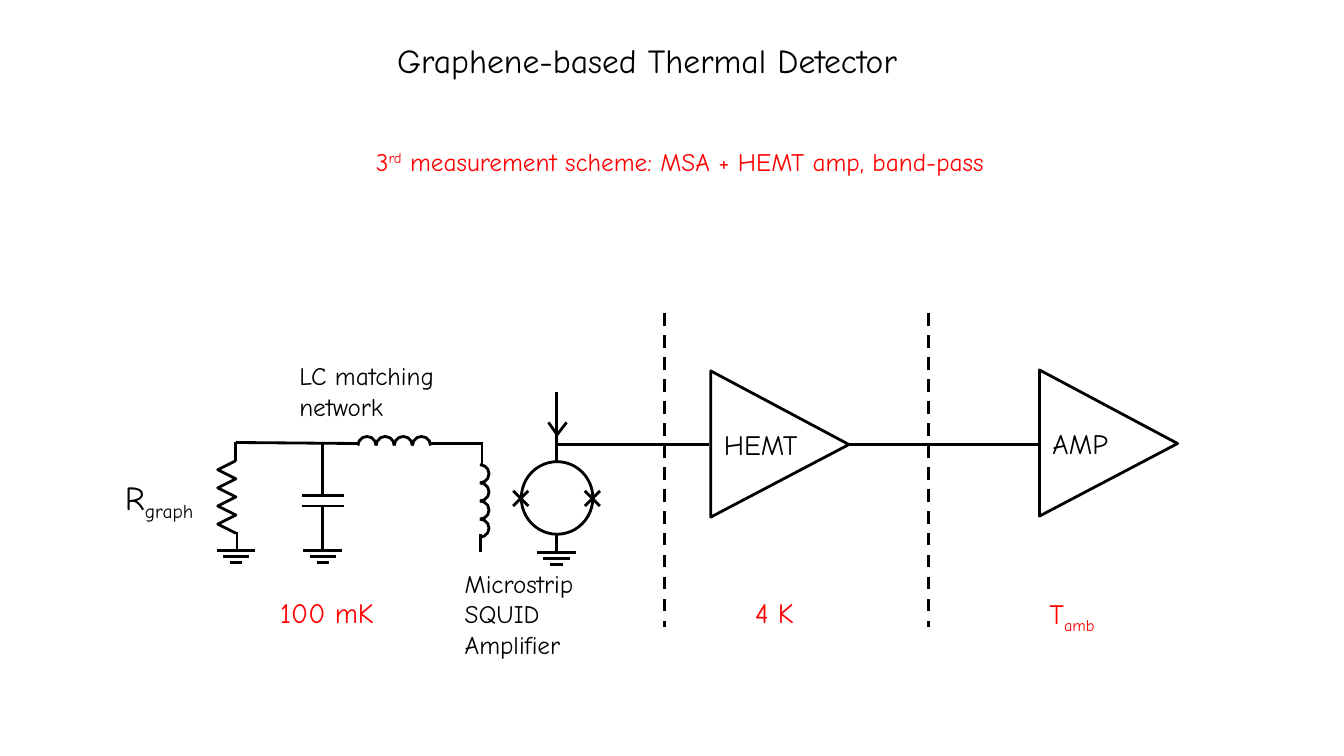
from pptx import Presentation
from pptx.util import Inches, Pt
from pptx.dml.color import RGBColor
from pptx.enum.dml import MSO_LINE as Dash
from pptx.enum.shapes import MSO_CONNECTOR as Link, MSO_SHAPE as Shape
from pptx.oxml.ns import qn
from lxml import etree

BLACK = RGBColor(0, 0, 0)
RED = RGBColor(255, 0, 0)

deck = Presentation()
deck.slide_width = Inches(13.33)
deck.slide_height = Inches(7.5)
slide = deck.slides.add_slide(deck.slide_layouts[6])
shapes = slide.shapes


def wire(x1, y1, x2, y2):
    line = shapes.add_connector(Link.STRAIGHT, Inches(x1), Inches(y1), Inches(x2), Inches(y2))
    line.line.color.rgb = BLACK
    line.line.width = Pt(2)
    etree.SubElement(line._element.spPr, qn("a:effectLst"))
    return line


def label(x, y, w, h, lines, size, color=BLACK):
    frame = shapes.add_textbox(Inches(x), Inches(y), Inches(w), Inches(h)).text_frame
    frame.word_wrap = True
    for i, parts in enumerate(lines):
        para = frame.paragraphs[0] if i == 0 else frame.add_paragraph()
        for text, shift in parts:
            run = para.add_run()
            run.text = text
            run.font.name = "Comic Neue"
            run.font.size = Pt(size)
            run.font.color.rgb = color
            if shift:
                run._r.get_or_add_rPr().set("baseline", str(shift * 1000))


label(3.84, 0.35, 5.62, 0.5, [[("Graphene-based Thermal Detector", 0)]], 24)
scheme = [("3", 0), ("rd", 30), (" measurement scheme: MSA + HEMT amp, band-pass", 0)]
label(3.63, 1.4, 6.9, 0.4, [scheme], 18, RED)
label(1.14, 4.68, 1.01, 0.51, [[("R", 0), ("graph", -25)]], 24)
label(2.87, 3.53, 1.66, 0.71, [[("LC matching network", 0)]], 18)
names = ["Microstrip", "SQUID", "Amplifier"]
label(4.51, 5.59, 1.45, 1.01, [[(name, 0)] for name in names], 18)
label(2.68, 5.86, 1.25, 0.44, [[("100 mK", 0)]], 20, RED)
label(7.39, 5.86, 0.75, 0.44, [[("4 K", 0)]], 20, RED)
label(10.31, 5.87, 0.85, 0.44, [[("T", 0), ("amb", -25)]], 20, RED)

zigzag = [(2.16 if i % 2 else 2.34, 4.57 + 0.09 * i) for i in range(9)]
outlines = [(zigzag, False)]
for name, x, y in [("HEMT", 7.05, 3.68), ("AMP", 10.31, 3.67)]:
    outlines.append(([(x, y), (x + 1.37, y + 0.73), (x, y + 1.45)], True))
    label(x + 0.03, y + 0.51, 1.35, 0.51, [[(name, 0)]], 20)

bodies = []
for points, closed in outlines:
    ends = [(Inches(x), Inches(y)) for x, y in points]
    path = shapes.build_freeform(*ends[0])
    path.add_line_segments(ends[1:], close=closed)
    bodies.append(path.convert_to_shape())

for i in range(4):
    coils = [(3.55 + 0.18 * i, 4.33, 180, 0), (4.67, 4.61 + 0.18 * i, 270, 90)]
    for x, y, start, stop in coils:
        coil = shapes.add_shape(Shape.ARC, Inches(x), Inches(y), Inches(0.18), Inches(0.18))
        coil.adjustments[0] = start * 0.6
        coil.adjustments[1] = stop * 0.6
        bodies.append(coil)

ring = shapes.add_shape(Shape.OVAL, Inches(5.17), Inches(4.58), Inches(0.71), Inches(0.72))
bodies.append(ring)

for body in bodies:
    body.shadow.inherit = False
    body.fill.background()
    body.line.color.rgb = BLACK
    body.line.width = Pt(2)

wires = [
    (2.34, 4.57, 2.34, 4.39), (2.34, 4.39, 3.55, 4.4), (2.35, 5.28, 2.35, 5.46),
    (3.2, 4.4, 3.2, 4.92), (3, 4.92, 3.41, 4.92),
    (3, 5.02, 3.41, 5.02), (3.2, 5.03, 3.2, 5.46),
    (4.27, 4.4, 4.78, 4.4), (4.78, 4.39, 4.78, 4.6), (4.77, 5.3, 4.77, 5.48),
    (5.52, 3.89, 5.52, 4.58), (5.52, 5.3, 5.52, 5.48),
    (5.44, 4.19, 5.53, 4.32), (5.62, 4.19, 5.52, 4.32),
    (5.52, 4.41, 7.03, 4.41), (8.39, 4.41, 10.31, 4.41),
]
for ends in wires:
    wire(*ends)

for x, y in [(2.34, 5.46), (3.2, 5.46), (5.52, 5.48)]:
    for i, half in enumerate([0.19, 0.13, 0.06]):
        wire(x - half, y + 0.06 * i, x + half, y + 0.06 * i)

for x in (5.09, 5.8):
    wire(x, 4.87, x + 0.15, 5.02)
    wire(x + 0.15, 4.87, x, 5.02)

for x in (6.59, 9.21):
    border = wire(x, 3.11, x, 6.22)
    border.line.width = Pt(2.25)
    border.line.dash_style = Dash.DASH

deck.save("out.pptx")
